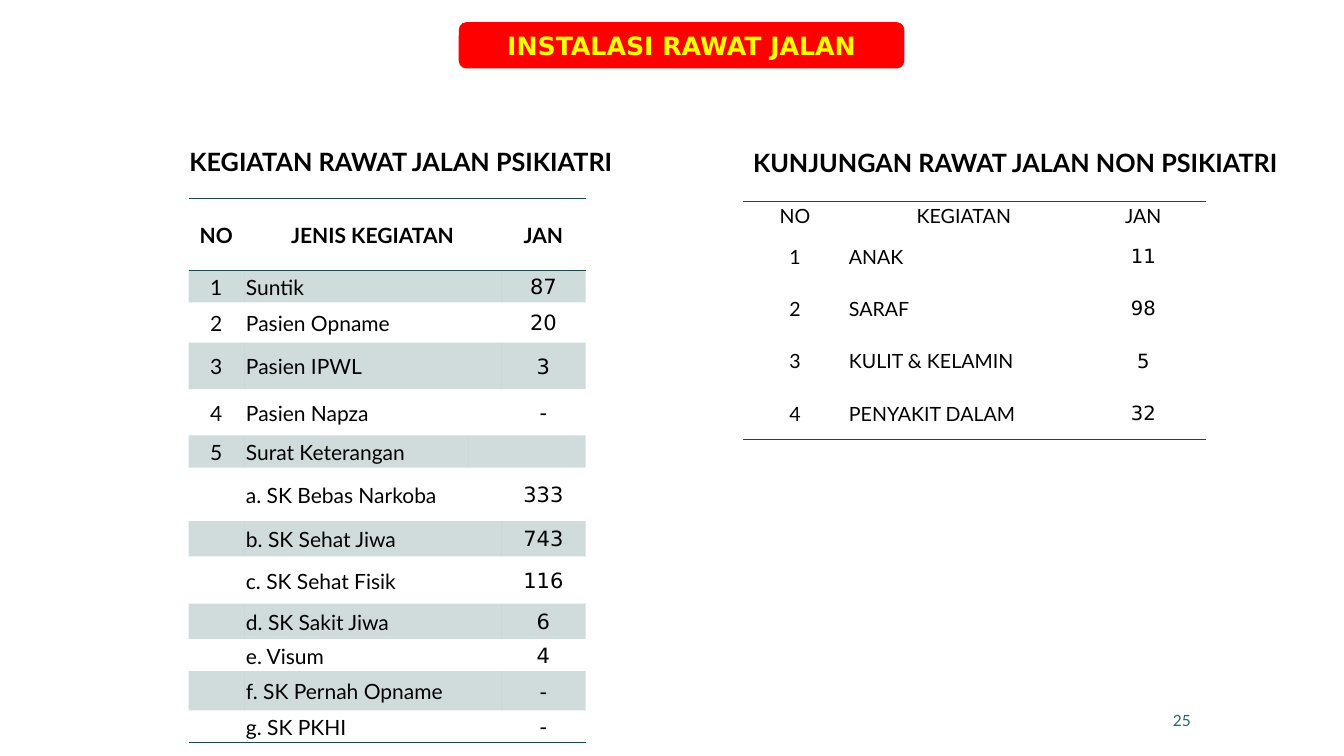
from lxml import etree
from pptx import Presentation, util as u
from pptx.dml.color import RGBColor
from pptx.enum import shapes, text
from pptx.oxml.ns import qn

TEAL = "164B4F"
CENTER, LEFT, RIGHT = text.PP_ALIGN.CENTER, text.PP_ALIGN.LEFT, text.PP_ALIGN.RIGHT


def rgb(value):
    return RGBColor.from_string(value)


def write(tf, content, size=18, font="Lato", color="000000", bold=False, align=LEFT, spacing=None):
    tf.vertical_anchor = text.MSO_ANCHOR.MIDDLE
    p = tf.paragraphs[0]
    p.alignment = align
    p.line_spacing = spacing
    if not content:
        etree.SubElement(p._p, qn("a:endParaRPr"), sz=str(size * 100))
        return
    r = p.add_run()
    r.text = content
    r.font.size = u.Pt(size)
    r.font.name = font
    r.font.bold = bold
    r.font.color.rgb = rgb(color)


prs = Presentation()
prs.slide_width, prs.slide_height = u.Inches(13.33), u.Inches(7.5)
s = prs.slides.add_slide(prs.slide_layouts[6])

psychiatric = [
    ("NO", "JENIS KEGIATAN", "", "JAN"),
    ("1", "Suntik", "", "87"),
    ("2", "Pasien Opname", "", "20"),
    ("3", "Pasien IPWL", "", "3"),
    ("4", "Pasien Napza", "", "-"),
    ("5", "Surat Keterangan", "", ""),
    ("", "a. SK Bebas Narkoba", "", "333"),
    ("", "b. SK Sehat Jiwa", "", "743"),
    ("", "c. SK Sehat Fisik", "", "116"),
    ("", "d. SK Sakit Jiwa", "", "6"),
    ("", "e. Visum", "", "4"),
    ("", "f. SK Pernah Opname", "", "-"),
    ("", "g. SK PKHI", "", "-"),
]
general = [
    ("NO", "KEGIATAN", "JAN"),
    ("1", "ANAK", "11"),
    ("2", "SARAF", "98"),
    ("3", "KULIT & KELAMIN", "5"),
    ("4", "PENYAKIT DALAM", "32"),
]
psychiatric_heights = [0.71, 0.32, 0.4, 0.46, 0.46, 0.32, 0.53, 0.35, 0.47, 0.35, 0.32, 0.39, 0.32]

tables = [
    (psychiatric, 1.87, 1.97, [0.55, 2.23, 0.32, 0.84], psychiatric_heights, 15, 0.02, True),
    (general, 7.37, 2, [1.03, 2.32, 1.24], [0.28] + [0.52] * 4, 14, 0.01, False),
]
for rows, x, y, widths, heights, size, top, styled in tables:
    frame = s.shapes.add_table(len(rows), len(widths), u.Inches(x), u.Inches(y),
                               u.Inches(sum(widths)), u.Inches(sum(heights)))
    table = frame.table
    table.first_row = table.horz_banding = False
    table._tbl.tblPr.find(qn("a:tableStyleId")).text = "{2D5ABB26-0587-4C30-8999-92F81FD0307C}"
    for column, width in zip(table.columns, widths):
        column.width = u.Inches(width)
    last_row, last_col = len(rows) - 1, len(widths) - 1
    for i, row in enumerate(rows):
        table.rows[i].height = u.Inches(heights[i])
        for j, content in enumerate(row):
            cell = table.cell(i, j)
            cell.margin_left = cell.margin_right = u.Inches(0.02)
            cell.margin_top, cell.margin_bottom = u.Inches(top), 0
            cell.vertical_anchor = text.MSO_ANCHOR.MIDDLE
            write(cell.text_frame, content, size=size, bold=styled and i == 0,
                  font="DejaVu Sans" if i and j == last_col else "Lato",
                  align=LEFT if i and j == 1 else CENTER)
            tcPr = cell._tc.get_or_add_tcPr()
            if styled and i % 2:
                cell.fill.solid()
                cell.fill.fore_color.rgb = rgb(TEAL)
                etree.SubElement(tcPr.find(".//" + qn("a:srgbClr")), qn("a:alpha"), val="20000")
            else:
                cell.fill.background()
            edges = {"a:lnB": i == last_row or (styled and i == 0), "a:lnT": i == 0}
            for tag, ruled in edges.items():
                if ruled:
                    ln = etree.Element(qn(tag), w=str(u.Pt(1)))
                    solid = etree.SubElement(ln, qn("a:solidFill"))
                    etree.SubElement(solid, qn("a:srgbClr"), val=TEAL)
                    tcPr.insert(0, ln)
        if styled:
            start = 2 if row[1] == "Surat Keterangan" else 1
            table.cell(i, start).merge(table.cell(i, start + 1))

banner = s.shapes.add_shape(shapes.MSO_SHAPE.ROUNDED_RECTANGLE, u.Inches(4.55), u.Inches(0.22),
                            u.Inches(4.42), u.Inches(0.46))
banner.shadow.inherit = False
banner.fill.solid()
banner.fill.fore_color.rgb = rgb("FF0000")
banner.line.fill.background()
write(banner.text_frame, "INSTALASI RAWAT JALAN", font="DejaVu Sans", color="FFFF00", bold=True, align=CENTER)

headings = [
    ("KUNJUNGAN RAWAT JALAN NON PSIKIATRI", 7.37, 1.45, 5.62),
    ("KEGIATAN RAWAT JALAN PSIKIATRI", 1.78, 1.44, 4.66),
]
for content, x, y, width in headings:
    heading = s.shapes.add_textbox(u.Inches(x), u.Inches(y), u.Inches(width), u.Inches(0.37))
    heading.text_frame.word_wrap = True
    write(heading.text_frame, content, bold=True, spacing=0.9)

number = s.shapes.add_textbox(u.Inches(8.8), u.Inches(6.95), u.Inches(3.11), u.Inches(0.4))
number.text_frame.word_wrap = True
write(number.text_frame, "25", size=11, color="1F696F", align=RIGHT)

prs.save("out.pptx")
